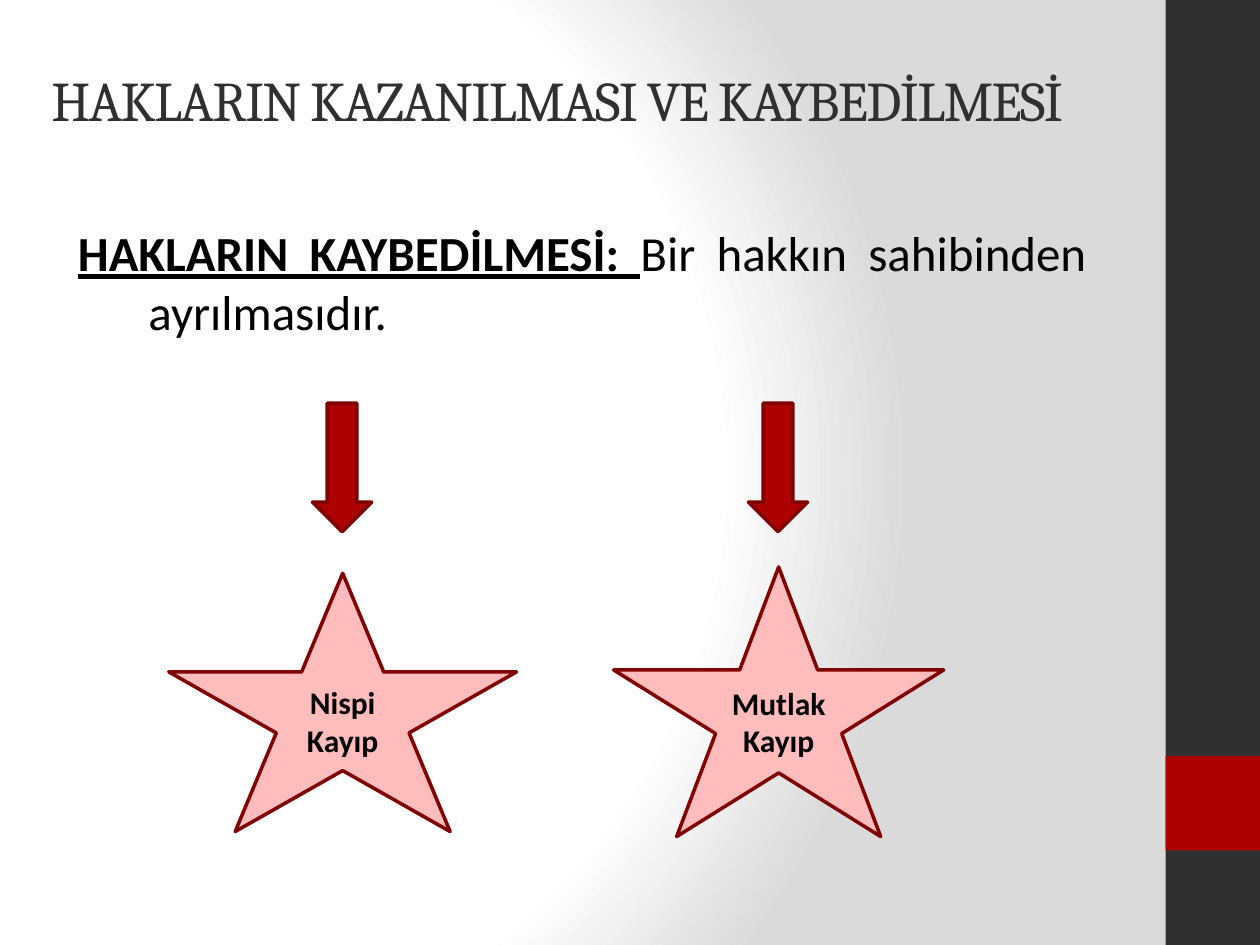
"""Build the slide on the loss of rights: definition, two arrows and two kinds of loss."""
import lxml.etree
import pptx
import pptx.dml.color
import pptx.enum.shapes
import pptx.enum.text
import pptx.oxml
import pptx.oxml.ns
import pptx.util

Inches = pptx.util.Inches
Pt = pptx.util.Pt
SHAPE = pptx.enum.shapes.MSO_SHAPE
ALIGN = pptx.enum.text.PP_ALIGN
ANCHOR = pptx.enum.text.MSO_ANCHOR
COLORS = {
    "white": "FFFFFF", "mist": "DADADA", "charcoal": "303030", "red": "AD0101",
    "dark_red": "800101", "pink": "FFBCBC", "black": "000000",
}


def add_figure(kind, box, fill, outline=None):
    figure = slide.shapes.add_shape(kind, *map(Inches, box))
    figure.shadow.inherit = False
    figure.fill.solid()
    figure.fill.fore_color.rgb = pptx.dml.color.RGBColor.from_string(COLORS[fill])
    if outline:
        figure.line.color.rgb = pptx.dml.color.RGBColor.from_string(COLORS[outline])
        figure.line.width = Pt(2)
    else:
        figure.line.fill.background()
    return figure


def add_run(paragraph, text, color, **formats):
    run = paragraph.add_run()
    run.text = text
    run.font.color.rgb = pptx.dml.color.RGBColor.from_string(COLORS[color])
    for name, value in formats.items():
        setattr(run.font, name, value)
    return run


deck = pptx.Presentation()
deck.slide_width, deck.slide_height = Inches(10), Inches(7.5)
slide = deck.slides.add_slide(deck.slide_layouts[6])

slide.background.fill.solid()
plain_fill = slide.element.find(".//" + pptx.oxml.ns.qn("a:solidFill"))
stops = "".join(
    f'<a:gs pos="{place * 1000}"><a:srgbClr val="{COLORS[color]}"/></a:gs>'
    for place, color in [(0, "white"), (75, "white"), (100, "mist")]
)
glow = pptx.oxml.parse_xml(
    f'<a:gradFill {pptx.oxml.ns.nsdecls("a")} rotWithShape="1"><a:gsLst>{stops}</a:gsLst>'
    '<a:path path="circle"><a:fillToRect l="20000" t="50000" r="100000" b="50000"/></a:path>'
    "</a:gradFill>"
)
plain_fill.getparent().replace(plain_fill, glow)

add_figure(SHAPE.RECTANGLE, (9.25, 0, 0.75, 7.5), "charcoal")
add_figure(SHAPE.RECTANGLE, (9.25, 6, 0.75, 0.75), "red")

heading = slide.shapes.add_textbox(*map(Inches, (0.31, 0.31, 8.33, 0.95))).text_frame
heading.word_wrap = True
heading.vertical_anchor = ANCHOR.MIDDLE
heading_run = add_run(heading.paragraphs[0], "HAKLARIN KAZANILMASI VE KAYBEDİLMESİ",
                      "charcoal", name="Cambria", size=Pt(32))
heading_run.font.element.set("spc", "-100") if hasattr(heading_run.font, "element") else \
    heading_run.font._element.set("spc", "-100")

definition = slide.shapes.add_textbox(*map(Inches, (0.39, 1.72, 8.33, 5.25))).text_frame
definition.word_wrap = True
sentence = definition.paragraphs[0]
sentence.alignment = ALIGN.JUSTIFY
indents = sentence._p.get_or_add_pPr()
for name, length in {"marL": 0.69, "indent": -0.56}.items():
    indents.set(name, str(Inches(length)))
for words, strong in [("HAKLARIN KAYBEDİLMESİ: ", True),
                      ("Bir hakkın sahibinden ayrılmasıdır.", False)]:
    add_run(sentence, words, "black", name="Calibri", size=Pt(28),
            bold=strong, underline=strong)

for arrow_left in (2.48, 5.94):
    add_figure(SHAPE.DOWN_ARROW, (arrow_left, 3.2, 0.47, 1.02), "red", "dark_red")

for loss, box in [("Nispi Kayıp", (1.34, 4.55, 2.76, 2.05)),
                  ("Mutlak Kayıp", (4.87, 4.5, 2.62, 2.14))]:
    label = add_figure(SHAPE.STAR_5_POINT, box, "pink", "dark_red").text_frame
    label.word_wrap = True
    label.vertical_anchor = ANCHOR.MIDDLE
    label.paragraphs[0].alignment = ALIGN.CENTER
    add_run(label.paragraphs[0], loss, "black", name="Calibri", size=Pt(18), bold=True)

deck.save("out.pptx")
